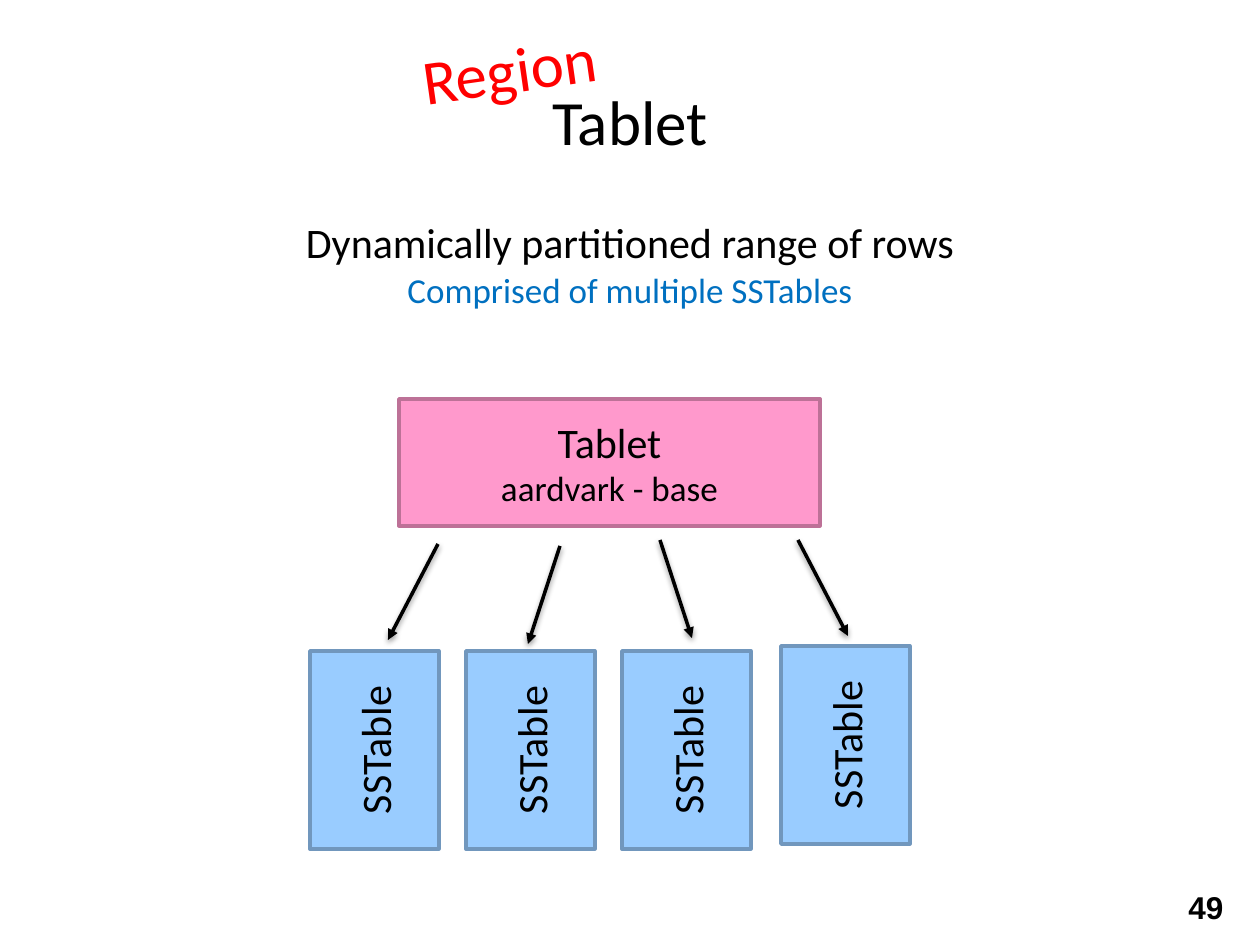
from lxml.etree import SubElement
from pptx import Presentation
from pptx.dml.color import RGBColor
from pptx.enum.shapes import MSO_CONNECTOR as Conn, MSO_SHAPE as Shape
from pptx.enum.text import MSO_ANCHOR as Anchor, PP_ALIGN as Align
from pptx.oxml import parse_xml
from pptx.oxml.ns import nsdecls, qn
from pptx.util import Emu, Pt

TITLE = ("Tablet", 36, "000000")
TITLE_BOX = (0, 76, 1260, 94)
LABELS = [
    ((0, 210, 1260, 63), ("Dynamically partitioned range of rows", 24, "000000"), 0),
    ((0, 262, 1260, 55), ("Comprised of multiple SSTables", 20, "0070C0"), 0),
    ((394, 24, 231, 94), ("Region", 36, "FF0000"), -8.1),
]
TABLET_BOX = (399, 399, 421, 127)
TABLET = [("Tablet", 24, "000000"), ("aardvark - base", 20, "000000")]
PINK, BLUE = ("FF99CC", "BD7197"), ("99CCFF", "7197BD")
SSTABLE = ("SSTable", 24, "000000")
SSTABLE_SIZE = (129, 198)
SSTABLE_AT = [(310, 651), (466, 651), (622, 651), (781, 646)]
ARROWS = [(438, 544, 388, 640), (560, 546, 528, 644),
          (660, 540, 692, 638), (798, 540, 848, 636)]
PAGE_BOX = (1176, 882, 73, 50)
PAGE = ("49", 18, "000000")
SHADOW = f"""<a:effectLst {nsdecls("a")}>
<a:outerShdw blurRad="40000" dist="20000" dir="5400000" rotWithShape="0">
<a:srgbClr val="000000"><a:alpha val="38000"/></a:srgbClr>
</a:outerShdw></a:effectLst>"""


def px(*values):
    return [Emu(round(v * 914400 / 126)) for v in values]


def rgb(code):
    return RGBColor.from_string(code)


def write(sp, lines, align=Align.CENTER, anchor=Anchor.TOP, font="Calibri", bold=False):
    tf = sp.text_frame
    tf.word_wrap = True
    tf.vertical_anchor = anchor
    for i, (text, size, color) in enumerate(lines):
        p = tf.add_paragraph() if i else tf.paragraphs[0]
        p.alignment = align
        r = p.add_run()
        r.text = text
        for name, value in {"name": font, "size": Pt(size), "bold": bold}.items():
            setattr(r.font, name, value)
        r.font.color.rgb = rgb(color)


def add_box(slide, box, lines, colors, vert="horz"):
    sp = slide.shapes.add_shape(Shape.RECTANGLE, *px(*box))
    sp.shadow.inherit = False
    fill, line = colors
    sp.fill.solid()
    sp.fill.fore_color.rgb = rgb(fill)
    sp.line.color.rgb = rgb(line)
    sp.line.width = Pt(2)
    write(sp, lines, anchor=Anchor.MIDDLE)
    sp.text_frame._txBody.bodyPr.set("vert", vert)


def add_arrow(slide, ends):
    c = slide.shapes.add_connector(Conn.STRAIGHT, *px(*ends))
    c.line.color.rgb = rgb("000000")
    c.line.width = Pt(2)
    SubElement(c.line._get_or_add_ln(), qn("a:tailEnd"), type="triangle")
    c._element.spPr.append(parse_xml(SHADOW))


def main():
    """Build the tablet slide and save it."""
    prs = Presentation()
    prs.slide_width, prs.slide_height = px(1260, 945)
    slide = prs.slides.add_slide(prs.slide_layouts[5])
    title = slide.shapes.title
    title.left, title.top, title.width, title.height = px(*TITLE_BOX)
    write(title, [TITLE])
    for box, line, angle in LABELS:
        sp = slide.shapes.add_textbox(*px(*box))
        sp.rotation = angle
        write(sp, [line])
    add_box(slide, TABLET_BOX, TABLET, PINK)
    for at in SSTABLE_AT:
        add_box(slide, at + SSTABLE_SIZE, [SSTABLE], BLUE, "vert270")
    for ends in ARROWS:
        add_arrow(slide, ends)
    page = slide.shapes.add_textbox(*px(*PAGE_BOX))
    write(page, [PAGE], align=Align.LEFT, font="Arial", bold=True)
    prs.save("out.pptx")


if __name__ == "__main__":
    main()
